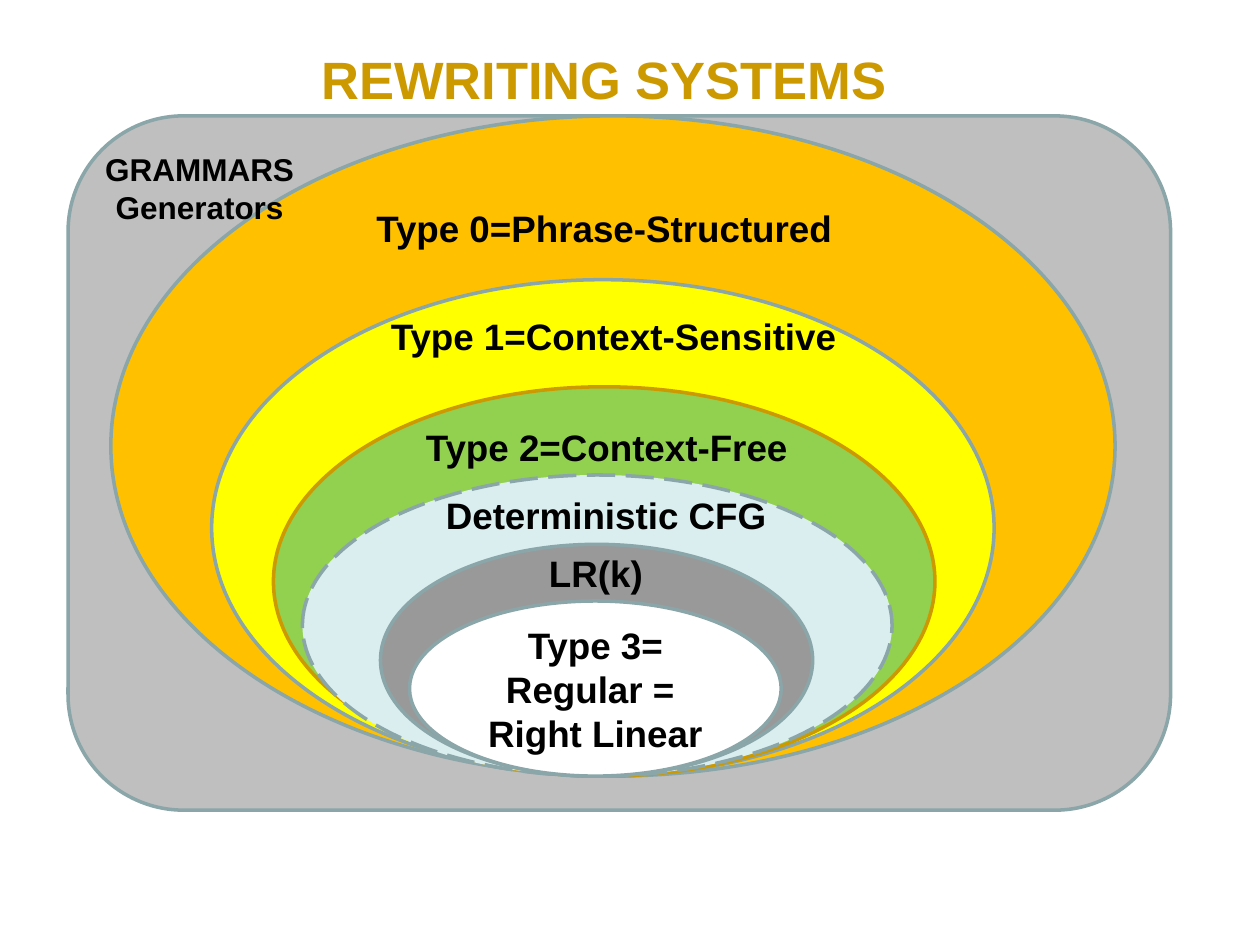
from pptx import Presentation
from pptx.dml.color import RGBColor
from pptx.enum.dml import MSO_LINE_DASH_STYLE as Dash
from pptx.enum.shapes import MSO_SHAPE as Preset
from pptx.enum.text import MSO_ANCHOR as Anchor, PP_ALIGN as Align
from pptx.util import Inches, Pt

SLIDE_W, SLIDE_H = Inches(10), Inches(7.5)
NEST_BOTTOM = 82.13
LABEL_H = 6

BLACK = RGBColor(0x00, 0x00, 0x00)
WHITE = RGBColor(0xFF, 0xFF, 0xFF)
SILVER = RGBColor(0xBF, 0xBF, 0xBF)
GREY = RGBColor(0x99, 0x99, 0x99)
ORANGE = RGBColor(0xFF, 0xC0, 0x00)
YELLOW = RGBColor(0xFF, 0xFF, 0x00)
GREEN = RGBColor(0x92, 0xD0, 0x50)
PALE_BLUE = RGBColor(0xDA, 0xED, 0xEF)
SLATE = RGBColor(0x8A, 0xA6, 0xA8)
GOLD = RGBColor(0xCC, 0x99, 0x00)


def box(left, top, width, height):
    """Turn percentages of the slide into a position and size."""
    return (int(SLIDE_W * left / 100), int(SLIDE_H * top / 100),
            int(SLIDE_W * width / 100), int(SLIDE_H * height / 100))


def write(holder, text, size=21, color=BLACK, align=Align.CENTER, anchor=Anchor.TOP):
    """Put bold Arial text, one paragraph per line, into a shape."""
    frame = holder.text_frame
    frame.word_wrap = True
    frame.vertical_anchor = anchor
    frame.text = text
    for paragraph in frame.paragraphs:
        paragraph.alignment = align
        for run in paragraph.runs:
            run.font.name = "Arial"
            run.font.size = Pt(size)
            run.font.bold = True
            run.font.color.rgb = color


def add_label(slide, area, text, **text_format):
    """Add a text box over the given area."""
    write(slide.shapes.add_textbox(*box(*area)), text, **text_format)


def add_region(slide, preset, area, fill, outline=SLATE, dash=None):
    """Add a filled, outlined region and return it."""
    region = slide.shapes.add_shape(preset, *box(*area))
    region.shadow.inherit = False
    region.fill.solid()
    region.fill.fore_color.rgb = fill
    region.line.color.rgb = outline
    region.line.width = Pt(2)
    if dash:
        region.line.dash_style = dash
    return region


def add_language_class(slide, left, top, width, fill, **outline_format):
    """Add one ellipse of the nest, resting on the shared bottom."""
    area = (left, top, width, NEST_BOTTOM - top)
    return add_region(slide, Preset.OVAL, area, fill, **outline_format)


def main():
    """Build the slide of nested grammar classes."""
    deck = Presentation()
    deck.slide_width, deck.slide_height = SLIDE_W, SLIDE_H
    slide = deck.slides.add_slide(deck.slide_layouts[6])

    add_region(slide, Preset.ROUNDED_RECTANGLE, (5.4, 12.27, 87.5, 73.47), SILVER)

    grammar_classes = [
        ((8.8, 12.27, 79.7), ORANGE, {},
         (28, 21.07, 39.9), "Type 0=Phrase-Structured", {}),
        ((16.8, 29.6, 62.1), YELLOW, {},
         (29.9, 32.53, 37.6), "Type 1=Context-Sensitive", {}),
        ((21.7, 40.93, 52.5), GREEN, {"outline": GOLD},
         (31.4, 44.27, 33.5), "Type 2=Context-Free", {}),
        ((24, 50.27, 46.8), PALE_BLUE, {"dash": Dash.LONG_DASH},
         (34.4, 51.47, 27.6), "Deterministic CFG", {"align": Align.LEFT}),
        ((30.2, 57.6, 34.3), GREY, {},
         (40, 57.6, 14.6), "LR(k)", {}),
    ]
    for ellipse, fill, outline_format, label, text, text_format in grammar_classes:
        add_language_class(slide, *ellipse, fill, **outline_format)
        add_label(slide, (*label, LABEL_H), text, **text_format)

    regular = add_language_class(slide, 32.5, 63.6, 29.5, WHITE)
    write(regular, "Type 3=\vRegular = \nRight Linear", anchor=Anchor.MIDDLE)

    add_label(slide, (3.7, 15.2, 24.3, 9.47), "GRAMMARS\nGenerators", size=18)
    add_label(slide, (16, 4.27, 63.9, 8.13), "REWRITING SYSTEMS", size=30, color=GOLD)

    deck.save("out.pptx")


if __name__ == "__main__":
    main()
